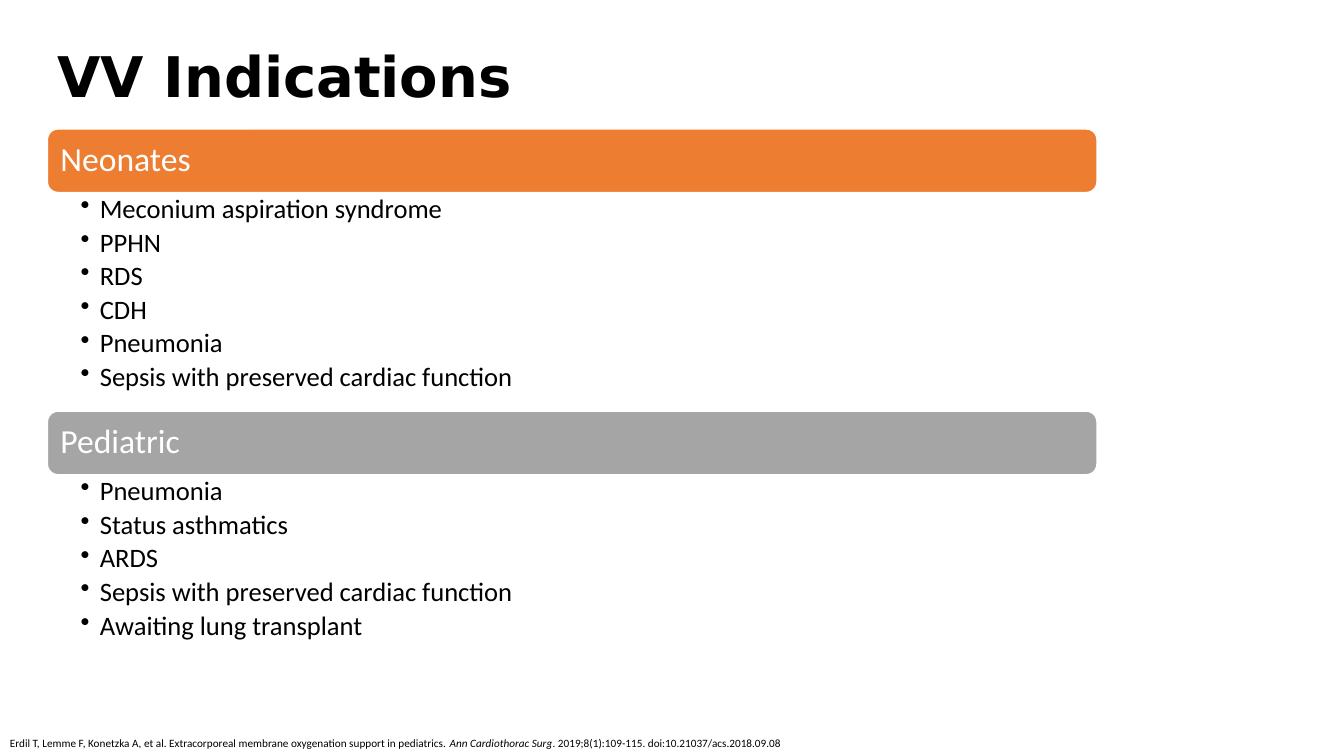
from dataclasses import dataclass

import lxml.etree
import pptx
import pptx.dml.color
import pptx.enum.shapes
import pptx.enum.text
import pptx.oxml.ns
import pptx.presentation
import pptx.slide
import pptx.text.text
import pptx.util

Inches = pptx.util.Inches
Pt = pptx.util.Pt


@dataclass(frozen=True)
class Theme:
    title_font: str = "DejaVu Sans"
    body_font: str = "Calibri"
    black: str = "000000"
    white: str = "FFFFFF"
    orange: str = "ED7D31"
    grey: str = "A5A5A5"
    title_size: float = 40
    header_size: float = 24
    bullet_size: float = 19
    citation_size: float = 8


@dataclass(frozen=True)
class Section:
    heading: str
    color: str
    body_height: float
    items: tuple[str, ...]


THEME = Theme()
LEFT, TOP, WIDTH, HEADER_HEIGHT = 0.47, 1.28, 10.41, 0.63
BULLET_INDENT = 0.19

SECTIONS = (
    Section("Neonates", THEME.orange, 2.17, (
        "Meconium aspiration syndrome", "PPHN", "RDS", "CDH", "Pneumonia",
        "Sepsis with preserved cardiac function")),
    Section("Pediatric", THEME.grey, 1.79, (
        "Pneumonia", "Status asthmatics", "ARDS",
        "Sepsis with preserved cardiac function", "Awaiting lung transplant")),
)

# Citation runs: text, italic
CITATION = (
    ("Erdil T, Lemme F, Konetzka A, et al. Extracorporeal membrane oxygenation "
     "support in pediatrics. ", False),
    ("Ann Cardiothorac Surg", True),
    (". 2019;8(1):109-115. doi:10.21037/acs.2018.09.08", False),
)


def rgb(color: str) -> pptx.dml.color.RGBColor:
    return pptx.dml.color.RGBColor.from_string(color)


def style(p: pptx.text.text._Paragraph, size: float, color: str = THEME.black,
          font: str = THEME.body_font, bold: bool = False) -> None:
    for r in p.runs:
        r.font.name = font
        r.font.size = Pt(size)
        r.font.bold = bold
        r.font.color.rgb = rgb(color)


def add_text(slide: pptx.slide.Slide, left: float, top: float, width: float,
             height: float) -> pptx.text.text.TextFrame:
    sp = slide.shapes.add_textbox(Inches(left), Inches(top), Inches(width), Inches(height))
    sp.text_frame.word_wrap = True
    return sp.text_frame


def add_bullet(p: pptx.text.text._Paragraph) -> None:
    pPr = p._p.get_or_add_pPr()
    pPr.set("marL", str(Inches(BULLET_INDENT)))
    pPr.set("indent", str(-Inches(BULLET_INDENT)))
    lxml.etree.SubElement(pPr, pptx.oxml.ns.qn("a:buChar"), char="•")


def add_header(slide: pptx.slide.Slide, section: Section, top: float) -> None:
    sp = slide.shapes.add_shape(
        pptx.enum.shapes.MSO_SHAPE.ROUNDED_RECTANGLE,
        Inches(LEFT), Inches(top), Inches(WIDTH), Inches(HEADER_HEIGHT))
    sp.shadow.inherit = False
    sp.fill.solid()
    sp.fill.fore_color.rgb = rgb(section.color)
    sp.line.color.rgb = rgb(THEME.white)
    sp.line.width = Pt(1)
    tf = sp.text_frame
    tf.vertical_anchor = pptx.enum.text.MSO_ANCHOR.MIDDLE
    tf.text = section.heading
    p = tf.paragraphs[0]
    p.alignment = pptx.enum.text.PP_ALIGN.LEFT
    p.line_spacing = 0.9
    style(p, THEME.header_size, THEME.white)


def add_items(slide: pptx.slide.Slide, section: Section, top: float) -> None:
    tf = add_text(slide, LEFT, top, WIDTH, section.body_height)
    tf.margin_left, tf.margin_right = Inches(0.33), Inches(0.19)
    tf.margin_top = tf.margin_bottom = Inches(0.03)
    tf.text = "\n".join(section.items)
    for p in tf.paragraphs:
        add_bullet(p)
        p.line_spacing = 0.9
        p.space_after = Pt(3.5)
        style(p, THEME.bullet_size)


def add_title(slide: pptx.slide.Slide) -> None:
    tf = add_text(slide, LEFT, 0.43, 7.09, 0.71)
    tf.vertical_anchor = pptx.enum.text.MSO_ANCHOR.MIDDLE
    tf.text = "VV Indications"
    p = tf.paragraphs[0]
    p.line_spacing = 0.9
    style(p, THEME.title_size, font=THEME.title_font, bold=True)


def add_citation(slide: pptx.slide.Slide) -> None:
    p = add_text(slide, 0, 7.26, 9.04, 0.24).paragraphs[0]
    for text, italic in CITATION:
        r = p.add_run()
        r.text = text
        r.font.italic = italic
    style(p, THEME.citation_size)


def main() -> None:
    prs = pptx.Presentation()
    prs.slide_width, prs.slide_height = Inches(13.33), Inches(7.5)
    slide = prs.slides.add_slide(prs.slide_layouts[6])

    add_title(slide)

    # Sections stacked without gaps
    top = TOP
    for section in SECTIONS:
        add_header(slide, section, top)
        add_items(slide, section, top + HEADER_HEIGHT)
        top += HEADER_HEIGHT + section.body_height

    add_citation(slide)
    prs.save("out.pptx")


if __name__ == "__main__":
    main()
